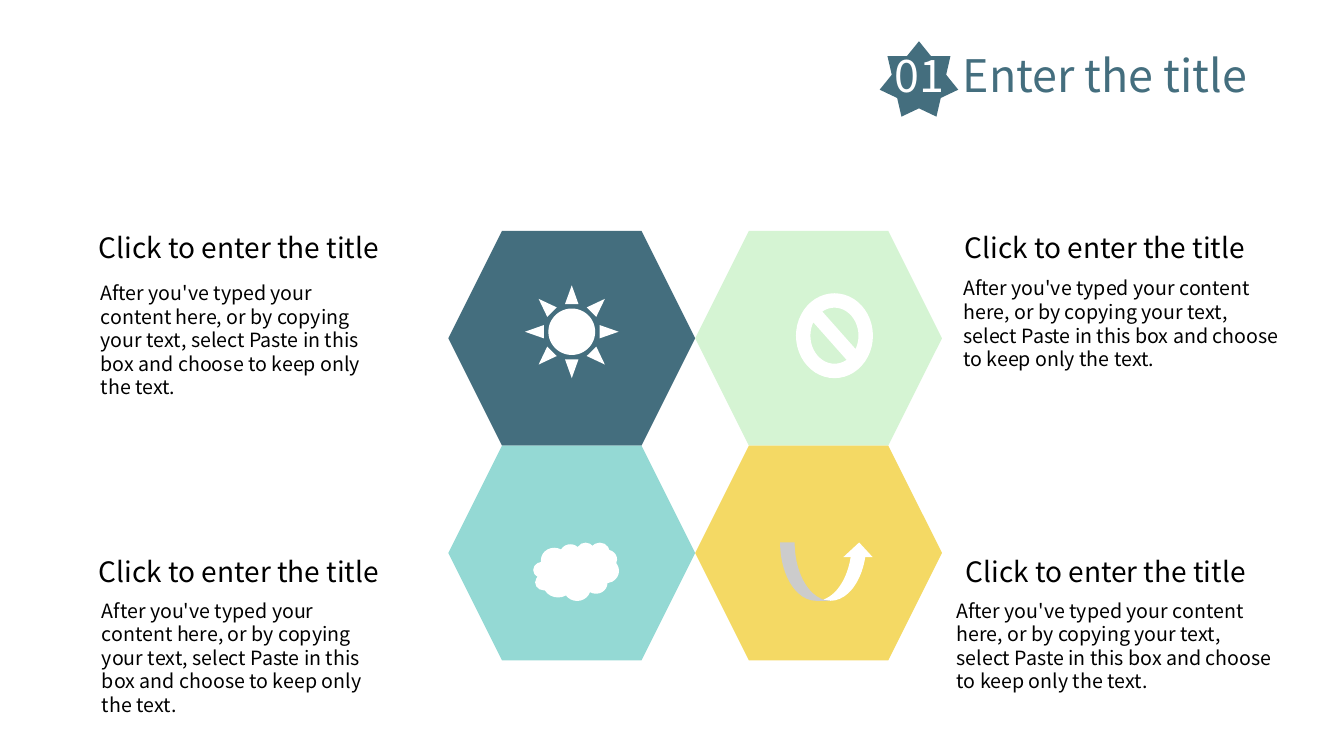
"""Build a slide with four hexagons, each with an icon and a captioned text."""
from dataclasses import dataclass

from lxml.etree import SubElement
from pptx import Presentation
from pptx.dml.color import RGBColor
from pptx.enum.shapes import MSO_SHAPE
from pptx.enum.text import MSO_AUTO_SIZE, PP_ALIGN
from pptx.oxml.ns import qn
from pptx.shapes.autoshape import Shape
from pptx.text.text import _Paragraph
from pptx.util import Cm

from pptx.util import Pt

FONT = "Noto Sans CJK SC"
SLATE, WHITE, BLACK = "446E7E", "FFFFFF", "000000"
HEXAGON_LEFT, HEXAGON_TOP = 11.3, 5.82
HEXAGON_WIDTH, HEXAGON_HEIGHT = 6.22, 5.41
HEADING = "Click to enter the title"
BODY = (
    "After you've typed your content here, or by copying your text, "
    "select Paste in this box and choose to keep only the text."
)


@dataclass(frozen=True)
class Box:
    """Position and size in centimetres."""

    left: float
    top: float
    width: float
    height: float

    def lengths(self) -> tuple[Cm, Cm, Cm, Cm]:
        """Return the four measures as lengths."""
        return Cm(self.left), Cm(self.top), Cm(self.width), Cm(self.height)


@dataclass(frozen=True)
class Topic:
    """One hexagon with its icon, heading and body."""

    column: int
    row: int
    color: str
    icon: MSO_SHAPE
    icon_box: Box
    heading_box: Box
    body_box: Box
    align: PP_ALIGN


TOPICS = (
    Topic(0, 0, SLATE, MSO_SHAPE.SUN, Box(13.23, 7.19, 2.36, 2.34),
          Box(2.24, 5.69, 9.53, 1.12), Box(2.29, 6.96, 7.67, 2.06), PP_ALIGN.LEFT),
    Topic(1, 0, "D5F4D3", MSO_SHAPE.NO_SYMBOL, Box(20.06, 7.39, 1.94, 2.14),
          Box(23.65, 5.69, 7.98, 1.12), Box(24.03, 6.84, 8.59, 2.64), PP_ALIGN.RIGHT),
    Topic(0, 1, "94D9D4", MSO_SHAPE.CLOUD, Box(13.44, 13.67, 2.16, 1.47),
          Box(2.24, 13.84, 9.53, 1.12), Box(2.32, 14.96, 7.67, 2.06), PP_ALIGN.LEFT),
    Topic(1, 1, "F4D964", MSO_SHAPE.CURVED_UP_ARROW, Box(19.66, 13.67, 2.36, 1.47),
          Box(23.67, 13.84, 7.98, 1.12), Box(23.86, 14.96, 8.59, 2.64), PP_ALIGN.RIGHT),
)


def rgb(color: str) -> RGBColor:
    """Turn a hex string into a colour."""
    return RGBColor.from_string(color)


def add_figure(shapes, preset: MSO_SHAPE, box: Box, color: str) -> Shape:
    """Draw a filled preset shape without outline or shadow."""
    figure = shapes.add_shape(preset, *box.lengths())
    figure.shadow.inherit = False
    figure.fill.solid()
    figure.fill.fore_color.rgb = rgb(color)
    figure.line.fill.background()
    return figure


def write(paragraph: _Paragraph, text: str, *, size: int, color: str = BLACK) -> None:
    """Append formatted text to a paragraph."""
    run = paragraph.add_run()
    run.text = text
    run.font.name = FONT
    run.font.size = Pt(size)
    run.font.color.rgb = rgb(color)


def add_paragraph_box(shapes, box: Box, align: PP_ALIGN = PP_ALIGN.LEFT) -> _Paragraph:
    """Add a wrapping text box and return its paragraph."""
    frame = shapes.add_textbox(*box.lengths()).text_frame
    frame.word_wrap = True
    frame.auto_size = MSO_AUTO_SIZE.SHAPE_TO_FIT_TEXT
    paragraph = frame.paragraphs[0]
    paragraph.alignment = align
    return paragraph


def add_title(shapes) -> None:
    """Draw the numbered star and the slide title."""
    add_figure(shapes, MSO_SHAPE.STAR_7_POINT, Box(22.17, 1.04, 1.98, 1.9), SLATE)
    title = add_paragraph_box(shapes, Box(22.3, 1.09, 10.57, 1.63))
    tabs = SubElement(title._p.get_or_add_pPr(), qn("a:tabLst"))
    SubElement(tabs, qn("a:tab"), pos=str(Cm(1.71)), algn="l")
    write(title, "01\t", size=32, color=WHITE)
    write(title, "Enter the title", size=32, color=SLATE)


def main() -> None:
    """Build and save the slide."""
    deck = Presentation()
    deck.slide_width, deck.slide_height = Cm(33.87), Cm(19.05)
    shapes = deck.slides.add_slide(deck.slide_layouts[6]).shapes
    add_title(shapes.add_group_shape().shapes)
    honeycomb = shapes.add_group_shape().shapes
    for topic in TOPICS:
        cell = Box(HEXAGON_LEFT + topic.column * HEXAGON_WIDTH,
                   HEXAGON_TOP + topic.row * HEXAGON_HEIGHT,
                   HEXAGON_WIDTH, HEXAGON_HEIGHT)
        add_figure(honeycomb, MSO_SHAPE.HEXAGON, cell, topic.color)
        add_figure(shapes, topic.icon, topic.icon_box, WHITE)
        write(add_paragraph_box(shapes, topic.body_box), BODY, size=14)
        write(add_paragraph_box(shapes, topic.heading_box, topic.align), HEADING, size=20)
    deck.save("out.pptx")


if __name__ == "__main__":
    main()
